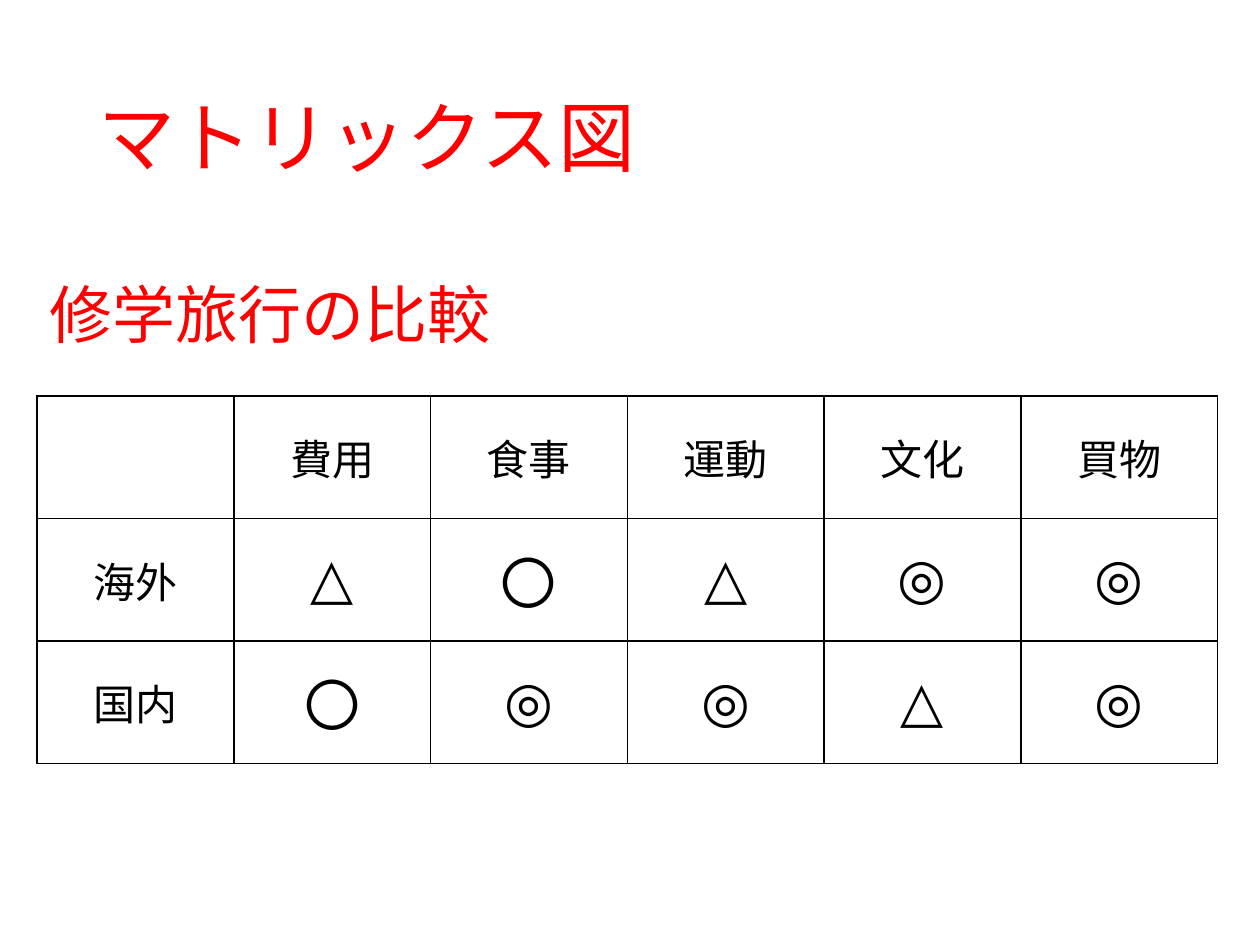
"""Build a slide with a matrix that compares school trips abroad and at home."""
from dataclasses import dataclass

from lxml import etree
from pptx import Presentation
from pptx.dml.color import RGBColor
from pptx.enum.text import MSO_ANCHOR, PP_ALIGN
from pptx.oxml.ns import qn
from pptx.util import Pt

MIDDLE, TOP = MSO_ANCHOR.MIDDLE, MSO_ANCHOR.TOP
CENTER = PP_ALIGN.CENTER
BLANK_LAYOUT = 6


@dataclass(frozen=True)
class Theme:
    font: str = "Calibri"
    heading: str = "FF0000"
    ink: str = "000000"
    title_size: int = 44
    subtitle_size: int = 36
    label_size: int = 24
    mark_size: int = 32
    border_width: int = 1


@dataclass(frozen=True)
class Heading:
    text: str
    left: float
    top: float
    width: float
    height: float
    size: int
    anchor: MSO_ANCHOR
    line_spacing: float


THEME = Theme()
HEADINGS = [
    Heading("マトリックス図", 49.5, 28.75, 621, 104.5, THEME.title_size, MIDDLE, 0.9),
    Heading("修学旅行の比較", 21, 154, 362, 51, THEME.subtitle_size, TOP, 1.0),
]
MATRIX = [
    ["", "費用", "食事", "運動", "文化", "買物"],
    ["海外", "△", "〇", "△", "◎", "◎"],
    ["国内", "〇", "◎", "◎", "△", "◎"],
]
MATRIX_LEFT, MATRIX_TOP = 21.2, 226.2
COLUMN_WIDTH, ROW_HEIGHT = 112.45, 70.1


def style_paragraph(para, size: int, color: str) -> None:
    para.font.name = THEME.font
    para.font.size = Pt(size)
    para.font.color.rgb = RGBColor.from_string(color)


def add_heading(page, heading: Heading) -> None:
    box = page.shapes.add_textbox(
        Pt(heading.left), Pt(heading.top), Pt(heading.width), Pt(heading.height))
    frame = box.text_frame
    frame.word_wrap = True
    frame.vertical_anchor = heading.anchor
    para = frame.paragraphs[0]
    para.text = heading.text
    para.line_spacing = heading.line_spacing
    style_paragraph(para, heading.size, THEME.heading)


def add_borders(cell) -> None:
    properties = cell._tc.get_or_add_tcPr()
    for side in ("a:lnL", "a:lnR", "a:lnT", "a:lnB"):
        line = etree.SubElement(properties, qn(side), w=str(Pt(THEME.border_width)))
        fill = etree.SubElement(line, qn("a:solidFill"))
        etree.SubElement(fill, qn("a:srgbClr"), val=THEME.ink)


def fill_cell(cell, text: str, size: int) -> None:
    add_borders(cell)
    cell.fill.background()
    cell.vertical_anchor = MIDDLE
    para = cell.text_frame.paragraphs[0]
    para.text = text
    para.alignment = CENTER
    style_paragraph(para, size, THEME.ink)


def add_matrix(page, rows: list[list[str]]) -> None:
    row_count, column_count = len(rows), len(rows[0])
    table = page.shapes.add_table(
        row_count, column_count, Pt(MATRIX_LEFT), Pt(MATRIX_TOP),
        Pt(COLUMN_WIDTH * column_count), Pt(ROW_HEIGHT * row_count)).table
    table.first_row = table.horz_banding = False
    for row_index, row in enumerate(rows):
        for column_index, text in enumerate(row):
            is_mark = row_index > 0 and column_index > 0
            size = THEME.mark_size if is_mark else THEME.label_size
            fill_cell(table.cell(row_index, column_index), text, size)


def main() -> None:
    deck = Presentation()
    deck.slide_width, deck.slide_height = Pt(720), Pt(540)
    page = deck.slides.add_slide(deck.slide_layouts[BLANK_LAYOUT])
    for heading in HEADINGS:
        add_heading(page, heading)
    add_matrix(page, MATRIX)
    deck.save("out.pptx")


if __name__ == "__main__":
    main()
